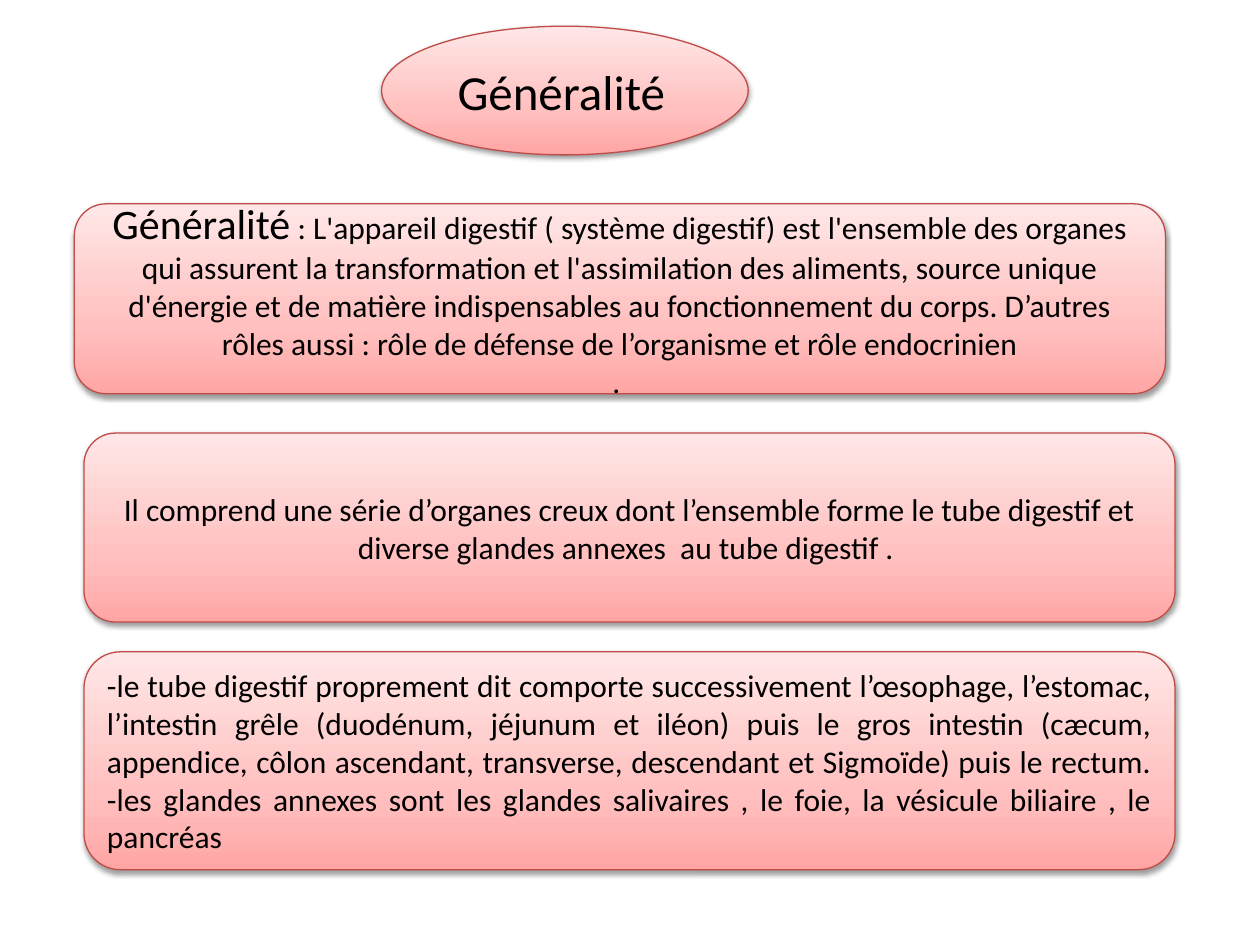
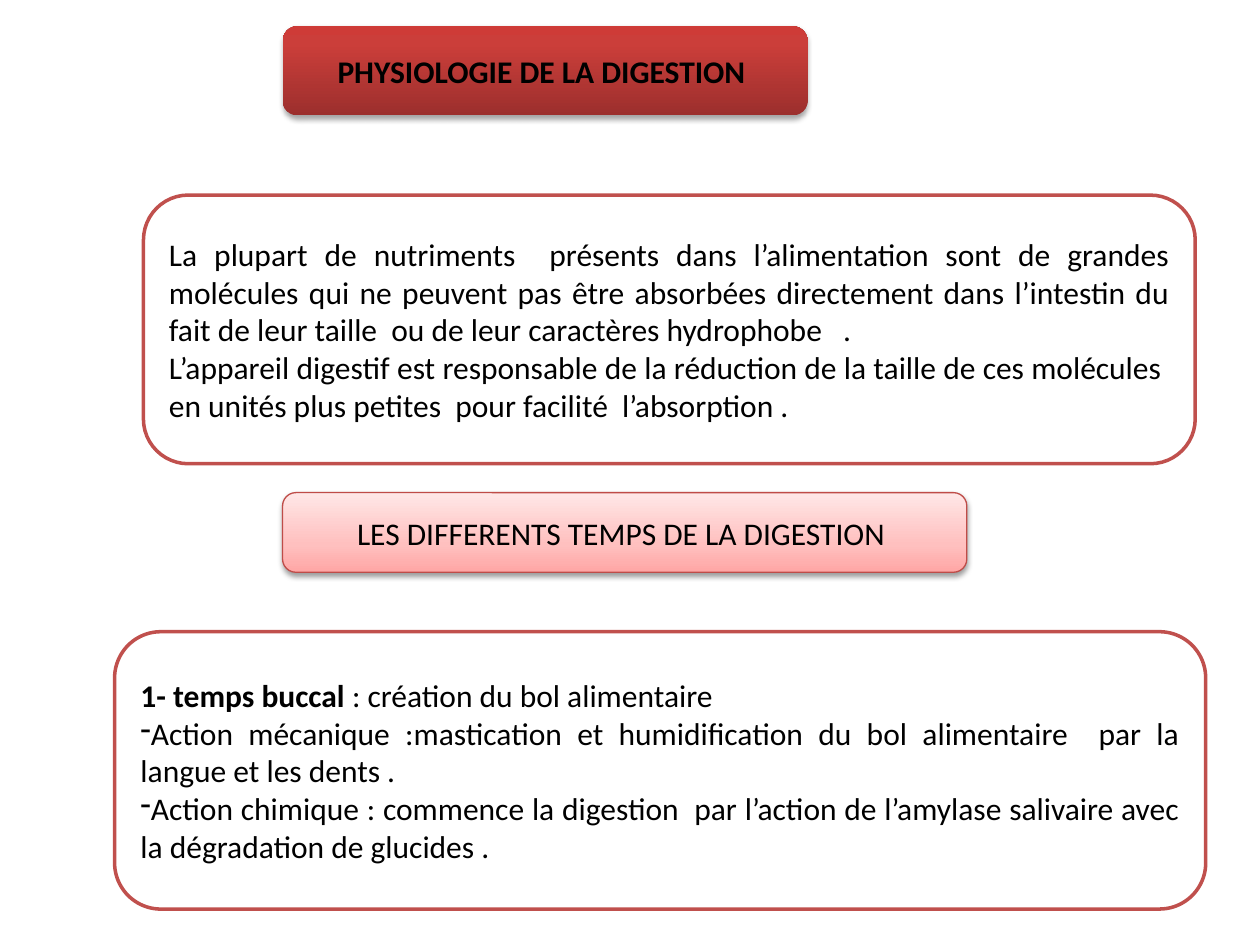
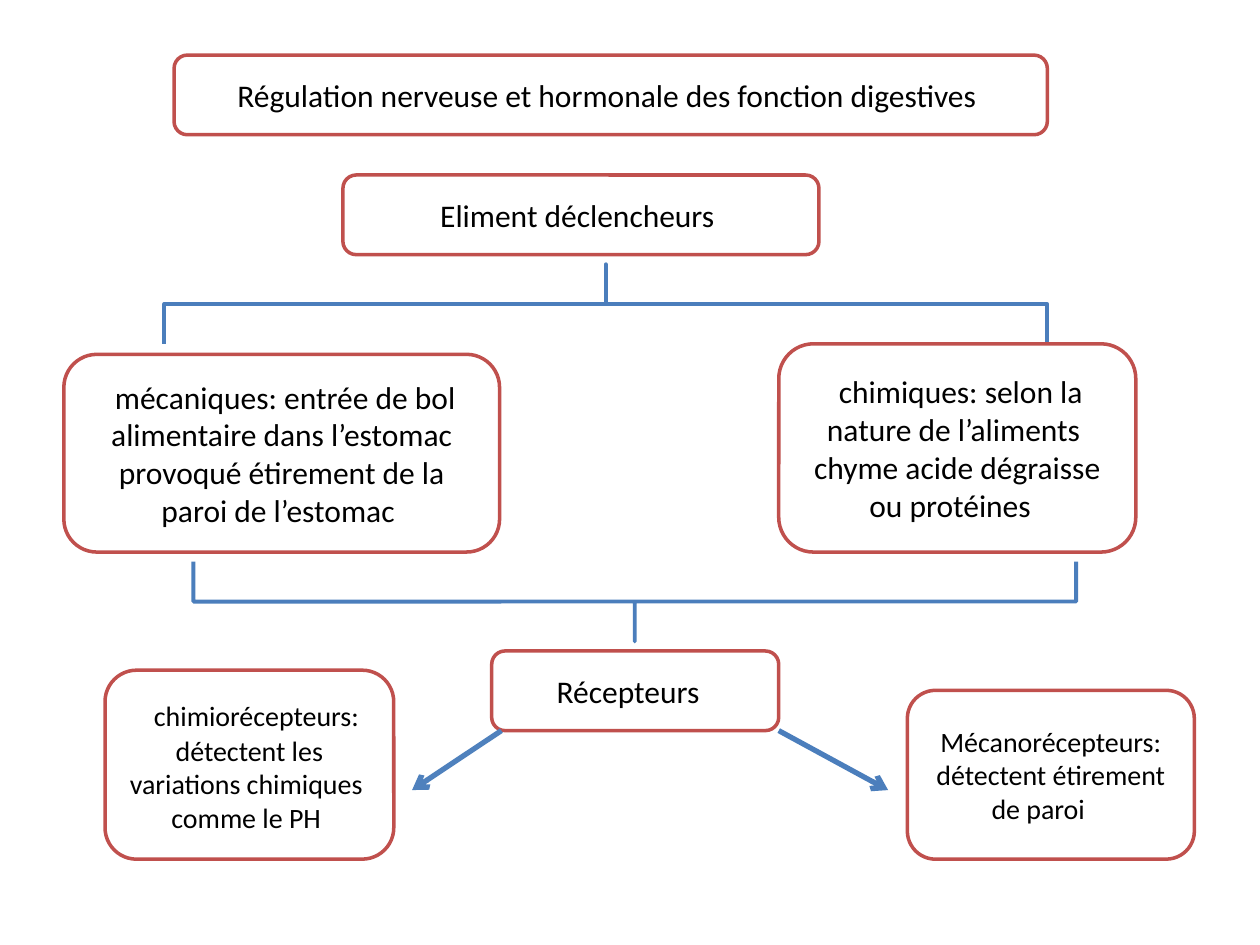
from lxml.etree import SubElement
from pptx import Presentation
from pptx.dml.color import RGBColor
from pptx.enum.shapes import MSO_CONNECTOR as Connector, MSO_SHAPE as Preset
from pptx.enum.text import MSO_ANCHOR as Anchor, PP_ALIGN as Align
from pptx.oxml.ns import qn
from pptx.util import Pt

COLORS = {
    "text": "000000", "paper": "FFFFFF", "shadow": "000000",
    "outline": "C0504D", "soft_outline": "BF4C48",
    "brace": "4B7EBC", "arrow": "4F81BD",
}
# Gradient stops run from the bottom edge to the top: (percent, colour).
LOOKS = {
    "outlined": {"fill": "paper", "line": "outline", "weight": 2},
    "soft": {"stops": [(0, "FFA6A5"), (35, "FFC0BF"), (100, "FFE7E7")],
             "line": "soft_outline", "weight": 0.75, "shadow": (38, 1.6)},
    "strong": {"stops": [(0, "9C2F2D"), (80, "CB3E3A"), (100, "CE3B37")],
               "shadow": (35, 1.8)},
}
TEXT = {"name": "Calibri", "size": Pt(18), "bold": False}
BAR_HEIGHT = 45.5
WIDE = 623.5


def rgb(name):
    return RGBColor.from_string(COLORS[name])


def add_xml(parent, tag, **attributes):
    return SubElement(parent, qn(tag), attributes)


def add_color(parent, value):
    return add_xml(parent, "a:srgbClr", val=value)


class Deck:
    def __init__(self):
        self.presentation = Presentation()
        self.presentation.slide_width = Pt(720)
        self.presentation.slide_height = Pt(540)
        self.slide = None

    def new_slide(self):
        self.slide = self.presentation.slides.add_slide(self.presentation.slide_layouts[6])

    def add_shape(self, preset, frame):
        shape = self.slide.shapes.add_shape(preset, *map(Pt, frame))
        shape.shadow.inherit = False
        return shape

    def set_line(self, line, color, weight):
        line.color.rgb = rgb(color)
        line.width = Pt(weight)

    def box(self, frame, paragraphs, look="outlined", preset=Preset.ROUNDED_RECTANGLE,
            align=Align.CENTER):
        """Draw a styled shape; a paragraph is a string or a list of (text, format) runs."""
        shape = self.add_shape(preset, frame)
        self.apply_look(shape, LOOKS[look])
        shape.text_frame.vertical_anchor = Anchor.MIDDLE
        for index, runs in enumerate(paragraphs):
            if index:
                paragraph = shape.text_frame.add_paragraph()
            else:
                paragraph = shape.text_frame.paragraphs[0]
            paragraph.alignment = align
            for text, changes in [(runs, {})] if isinstance(runs, str) else runs:
                run = paragraph.add_run()
                run.text = text
                run.font.color.rgb = rgb("text")
                for key, value in {**TEXT, **changes}.items():
                    setattr(run.font, key, value)
        return shape

    def apply_look(self, shape, look):
        properties = shape._element.spPr
        if "stops" in look:
            shape.fill.gradient()
            shape.fill.gradient_angle = 90
            stop_list = properties.find(".//" + qn("a:gsLst"))
            for stop in list(stop_list):
                stop_list.remove(stop)
            for percent, color in look["stops"]:
                add_color(add_xml(stop_list, "a:gs", pos=str(percent * 1000)), color)
        else:
            shape.fill.solid()
            shape.fill.fore_color.rgb = rgb(look["fill"])
        if "line" in look:
            self.set_line(shape.line, look["line"], look["weight"])
        else:
            shape.line.fill.background()
        if "shadow" in look:
            opacity, distance = look["shadow"]
            shadow = add_xml(properties.find(qn("a:effectLst")), "a:outerShdw",
                             blurRad=str(Pt(3.1)), dist=str(Pt(distance)),
                             dir="5400000", rotWithShape="0")
            add_xml(add_color(shadow, COLORS["shadow"]), "a:alpha", val=str(opacity * 1000))

    def bullets(self, shape, first):
        """Give a dash to every paragraph from the given one on."""
        for paragraph in shape.text_frame.paragraphs[first:]:
            add_xml(paragraph._p.get_or_add_pPr(), "a:buChar", char="-")

    def brace(self, left, top, width, height, rotation):
        """Draw a square brace lying in the given visible frame."""
        shift = (width - height) / 2
        shape = self.add_shape(Preset.RIGHT_BRACE, (left + shift, top - shift, height, width))
        shape.rotation = rotation
        shape._element.spPr.find(qn("a:xfrm")).set("flipH", "1")
        shape.adjustments[0], shape.adjustments[1] = 0, 0.5
        shape.fill.background()
        self.set_line(shape.line, "brace", 2.25)

    def arrow(self, start, end, color):
        connector = self.slide.shapes.add_connector(
            Connector.STRAIGHT, *map(Pt, (*start, *end)))
        self.set_line(connector.line, color, 3)
        add_xml(connector.line._get_or_add_ln(), "a:tailEnd", type="arrow")
        add_xml(connector._element.spPr, "a:effectLst")


def build_overview(deck):
    deck.new_slide()
    deck.box((48, 247.5, WIDE, 108), [
        "Il comprend une série d’organes creux dont l’ensemble forme le tube digestif "
        "et diverse glandes annexes  au tube digestif . "], "soft")
    deck.box((48, 372.5, WIDE, 124.5), [
        "-le tube digestif proprement dit comporte successivement l’œsophage, l’estomac, "
        "l’intestin grêle (duodénum, jéjunum et iléon) puis le gros intestin (cæcum, "
        "appendice, côlon ascendant, transverse, descendant et Sigmoïde) puis le rectum. "
        "-les glandes annexes sont les glandes salivaires , le foie, la vésicule biliaire , "
        "le pancréas"], "soft", align=Align.JUSTIFY)
    deck.box((42.5, 116.5, WIDE, 108.5), [
        [("Généralité", {"size": Pt(24)}),
         (" : L'appareil digestif ( système digestif) est l'ensemble des organes qui "
          "assurent la transformation et l'assimilation des aliments, source unique "
          "d'énergie et de matière indispensables au fonctionnement du corps. D’autres "
          "rôles aussi : rôle de défense de l’organisme et rôle endocrinien", {})],
        ". "], "soft")
    deck.box((218, 15, 209.5, 73.5),
             [[("Généralité", {"size": Pt(28)}), (" ", {})]], "soft", Preset.OVAL)


def build_physiology(deck):
    deck.new_slide()
    deck.box((161.5, 15, 300, 51),
             [[("PHYSIOLOGIE DE LA DIGESTION ", {"bold": True})]], "strong")
    deck.box((82, 111.5, 601, 153.5), [
        "La plupart de nutriments  présents dans l’alimentation sont de grandes molécules "
        "qui ne peuvent pas être absorbées directement dans l’intestin du fait de leur "
        "taille  ou de leur caractères hydrophobe   .",
        "L’appareil digestif est responsable de la réduction de la taille de ces molécules  "
        "en unités plus petites  pour facilité  l’absorption .  "], align=Align.JUSTIFY)
    deck.box((161.5, 281.5, 391, BAR_HEIGHT), ["LES DIFFERENTS TEMPS DE LA DIGESTION "], "soft")
    oral_phase = deck.box((65.5, 361, WIDE, 158.5), [
        [("1- temps buccal ", {"bold": True}), (": création du bol alimentaire ", {})],
        "Action mécanique :mastication et humidification du bol alimentaire  par la langue "
        "et les dents .",
        "Action chimique : commence la digestion  par l’action de l’amylase salivaire avec "
        "la dégradation de glucides . "], align=Align.JUSTIFY)
    deck.bullets(oral_phase, 1)


def build_regulation(deck):
    small = {"size": Pt(16)}
    brace_width = 504.5
    deck.new_slide()
    deck.box((99.5, 31.5, 499, BAR_HEIGHT),
             ["Régulation nerveuse et hormonale des fonction digestives "])
    deck.box((196, 100, 272, BAR_HEIGHT), ["Eliment déclencheurs "])
    deck.brace(94, 151, brace_width, BAR_HEIGHT, 90)
    deck.box((36.5, 202.5, 249, 113), [
        " mécaniques: entrée de bol alimentaire dans l’estomac provoqué étirement de la "
        "paroi de l’estomac "])
    deck.box((445, 196.5, 204, 119), [
        " chimiques: selon la nature de l’aliments  chyme acide dégraisse ou protéines  "])
    deck.brace(110.5, 321, brace_width, BAR_HEIGHT, 270)
    deck.box((281, 372, 164, BAR_HEIGHT), ["Récepteurs  "])
    deck.arrow((445, 417.5), (507.5, 451.5), "brace")
    deck.arrow((286.5, 417.5), (235.5, 451.5), "arrow")
    deck.box((518.5, 394.5, 164, 96.5),
             [[("Mécanorécepteurs: détectent étirement de paroi    ", small)]])
    deck.box((60, 383, 165, 108), [
        [("  ", {}),
         ("chimiorécepteurs: détectent les variations chimiques  comme le PH ", small)]])


def main():
    deck = Deck()
    for build in (build_overview, build_physiology, build_regulation):
        build(deck)
    deck.presentation.save("out.pptx")


if __name__ == "__main__":
    main()
